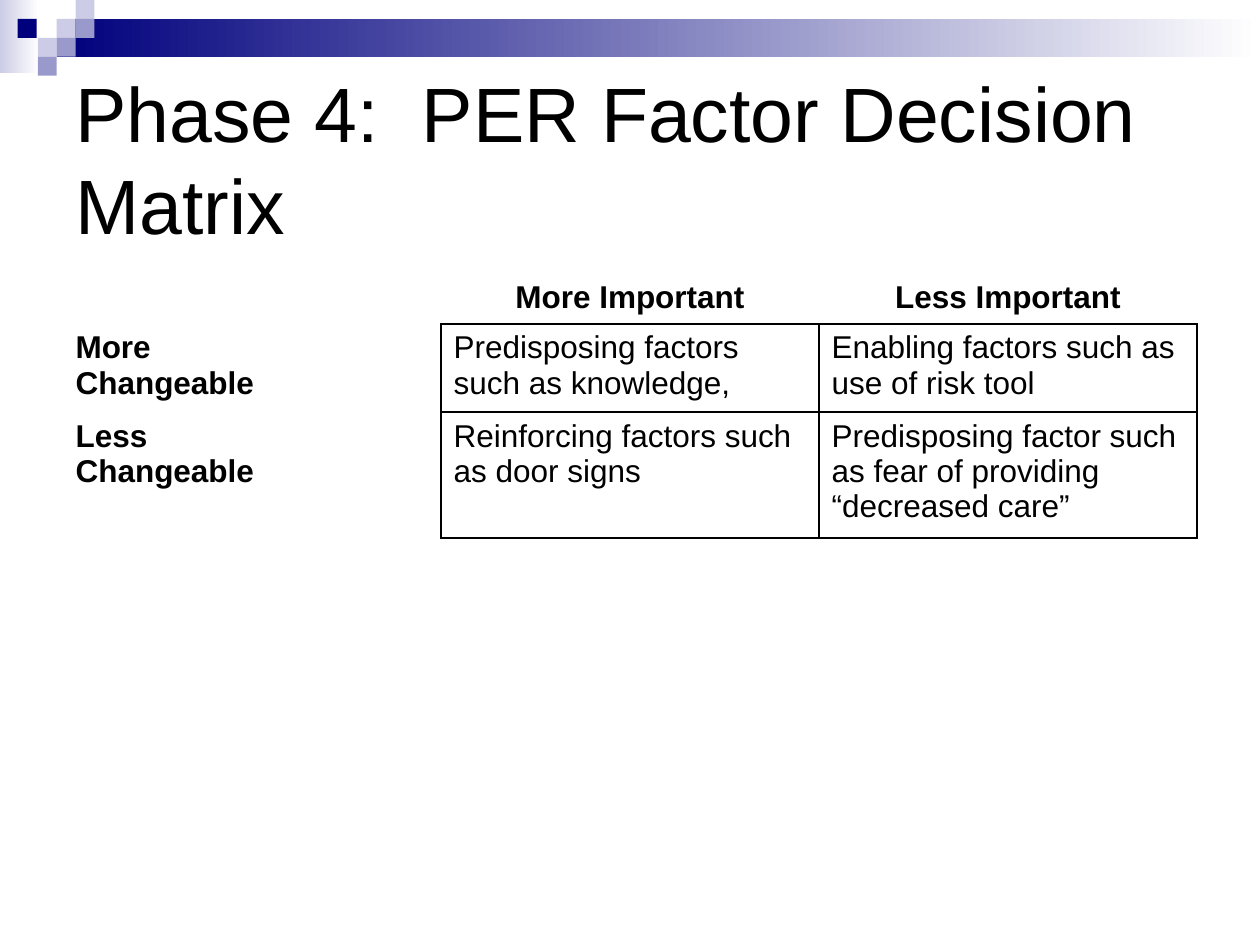
from typing import NamedTuple

from lxml import etree
from pptx import Presentation
from pptx.dml.color import RGBColor
from pptx.enum.shapes import MSO_SHAPE
from pptx.enum.text import MSO_ANCHOR, PP_ALIGN
from pptx.oxml.ns import qn
from pptx.util import Inches, Pt

RECTANGLE = MSO_SHAPE.RECTANGLE
MIDDLE = MSO_ANCHOR.MIDDLE
LEFT, CENTER = PP_ALIGN.LEFT, PP_ALIGN.CENTER

FONT = "Arial"
BLACK, WHITE = "000000", "FFFFFF"
NAVY, LAVENDER, PERIWINKLE = "00007D", "CCCCE6", "9999CC"


class Block(NamedTuple):
    left: float
    top: float
    width: float
    height: float
    color: str
    fades: bool = False


def square(left: float, top: float, color: str) -> Block:
    return Block(left, top, 0.15, 0.15, color)


BANNER = [
    Block(0, 0, 0.31, 0.58, LAVENDER, fades=True),
    Block(0.45, 0.15, 9.55, 0.3, NAVY, fades=True),
    square(0.45, 0.15, LAVENDER),
    square(0.6, 0, LAVENDER),
    square(0.6, 0.15, PERIWINKLE),
    square(0.3, 0.3, LAVENDER),
    square(0.14, 0.15, NAVY),
    square(0.45, 0.3, PERIWINKLE),
    square(0.3, 0.45, PERIWINKLE),
]

MATRIX = [
    ["", "More Important", "Less Important"],
    ["More\nChangeable", "Predisposing factors such as knowledge,",
     "Enabling factors such as use of risk tool"],
    ["Less\nChangeable", "Reinforcing factors such as door signs",
     "Predisposing factor such as fear of providing “decreased care”"],
]
ROW_HEIGHTS = [0.4, 0.66, 0.94]
COLUMN_WIDTH = 3


def rgb(color: str) -> RGBColor:
    return RGBColor.from_string(color)


def draw_block(page, block: Block) -> None:
    shape = page.shapes.add_shape(
        RECTANGLE, Inches(block.left), Inches(block.top),
        Inches(block.width), Inches(block.height))
    shape.shadow.inherit = False
    shape.line.fill.background()
    if block.fades:
        shape.fill.gradient()
        shape.fill.gradient_angle = 0
        stops = zip(shape.fill.gradient_stops, (block.color, WHITE), (0, 1))
        for stop, color, position in stops:
            stop.color.rgb = rgb(color)
            stop.position = position
    else:
        shape.fill.solid()
        shape.fill.fore_color.rgb = rgb(block.color)


def write(frame, text: str, size: float, bold: bool = False, align=LEFT) -> None:
    frame.text = text
    for paragraph in frame.paragraphs:
        paragraph.alignment = align
        paragraph.font.size = Pt(size)
        for span in paragraph.runs:
            span.font.name = FONT
            span.font.size = Pt(size)
            span.font.bold = bold
            span.font.color.rgb = rgb(BLACK)


def set_borders(cell, colors: dict[str, str]) -> None:
    properties = cell._tc.get_or_add_tcPr()
    for index, (side, color) in enumerate(colors.items()):
        line = etree.Element(qn(f"a:ln{side}"), w=str(Pt(1)))
        fill = etree.SubElement(line, qn("a:solidFill"))
        etree.SubElement(fill, qn("a:srgbClr"), val=color)
        properties.insert(index, line)


def draw_matrix(page) -> None:
    columns = len(MATRIX[0])
    table = page.shapes.add_table(
        len(MATRIX), columns, Inches(0.5), Inches(2.17),
        Inches(COLUMN_WIDTH * columns), Inches(sum(ROW_HEIGHTS))).table
    table.first_row = table.horz_banding = False
    for column in table.columns:
        column.width = Inches(COLUMN_WIDTH)
    for r, texts in enumerate(MATRIX):
        table.rows[r].height = Inches(ROW_HEIGHTS[r])
        for c, text in enumerate(texts):
            cell = table.cell(r, c)
            is_label = r == 0 or c == 0
            write(cell.text_frame, text, 18, is_label, CENTER if r == 0 else LEFT)
            cell.fill.background()
            # Label cells show only the edges they share with the body
            edge = WHITE if is_label else BLACK
            set_borders(cell, {
                "L": edge,
                "R": BLACK if c == 0 and r > 0 else edge,
                "T": edge,
                "B": BLACK if r == 0 and c > 0 else edge,
            })


def main() -> None:
    deck = Presentation()
    deck.slide_width, deck.slide_height = Inches(10), Inches(7.5)
    page = deck.slides.add_slide(deck.slide_layouts[6])

    # Banner
    for block in BANNER:
        draw_block(page, block)

    # Title
    box = page.shapes.add_textbox(Inches(0.5), Inches(0.5), Inches(9), Inches(1.5))
    box.text_frame.word_wrap = True
    box.text_frame.vertical_anchor = MIDDLE
    write(box.text_frame, "Phase 4:  PER Factor Decision Matrix", 44)

    # Decision matrix
    draw_matrix(page)

    deck.save("out.pptx")


if __name__ == "__main__":
    main()
